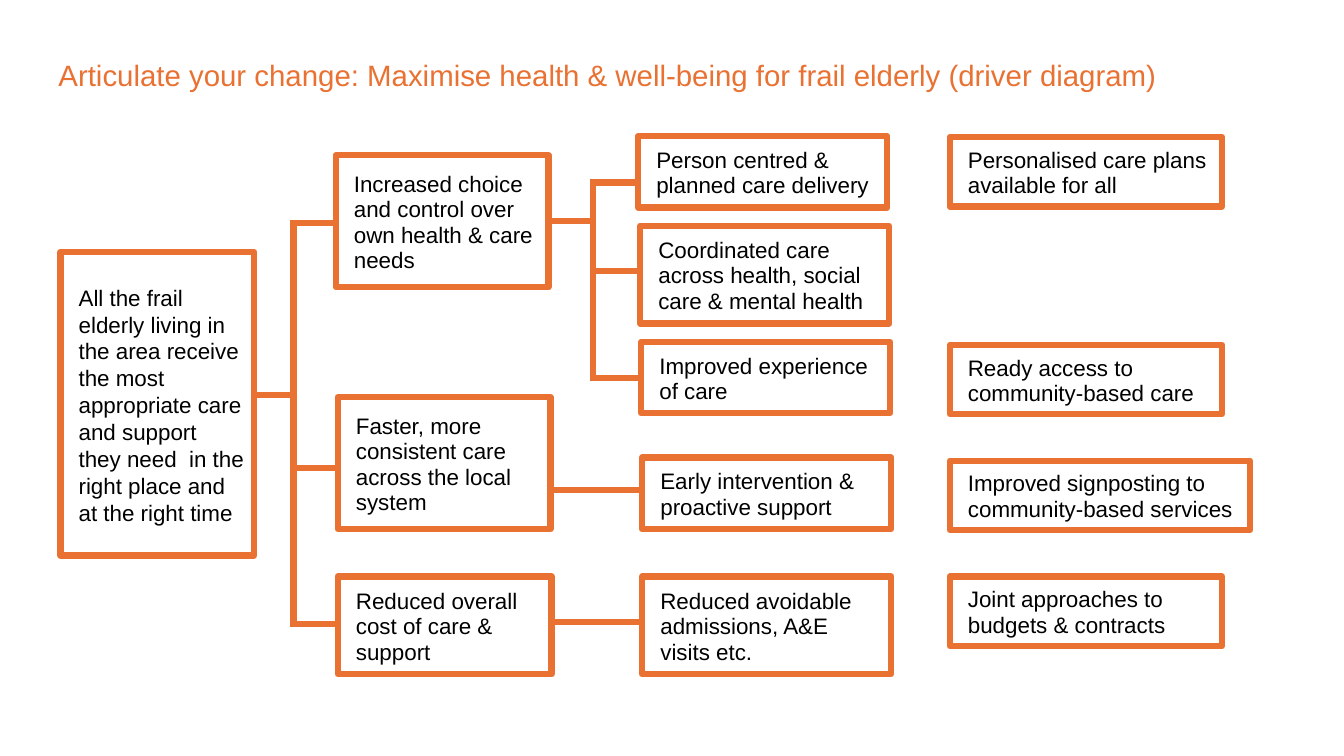
from dataclasses import dataclass

from lxml import etree
from pptx import Presentation
from pptx.dml.color import RGBColor
from pptx.enum.shapes import MSO_CONNECTOR, MSO_SHAPE
from pptx.enum.text import MSO_ANCHOR, PP_ALIGN
from pptx.oxml.ns import qn
from pptx.util import Emu, Pt

STRAIGHT = MSO_CONNECTOR.STRAIGHT
RECTANGLE = MSO_SHAPE.RECTANGLE
MIDDLE = MSO_ANCHOR.MIDDLE
LEFT = PP_ALIGN.LEFT
TITLE_ONLY = 5
EMU_PER_PX = 9144  # 100 px to the inch


@dataclass(frozen=True)
class Theme:
    accent: RGBColor = RGBColor(0xE9, 0x71, 0x32)
    paper: RGBColor = RGBColor(0xFF, 0xFF, 0xFF)
    ink: RGBColor = RGBColor(0x00, 0x00, 0x00)
    font: str = "Arial"
    title_size: Pt = Pt(21)
    body_size: Pt = Pt(16)
    tight_spacing: Pt = Pt(18.2)
    open_spacing: Pt = Pt(19.2)
    line_width: Pt = Pt(4.5)


@dataclass(frozen=True)
class Box:
    left: int
    top: int
    width: int
    height: int

    def inner(self, left, top, width, height):
        return Box(self.left + left, self.top + top, width, height)

    def emu(self):
        return [px(n) for n in (self.left, self.top, self.width, self.height)]


THEME = Theme()

TITLE = "Articulate your change: Maximise health & well-being for frail elderly (driver diagram)"

# Each entry: left, top, width, height inside its column, then its paragraphs
OUTCOME = [
    (0, 0, 192, 301, ["All the frail elderly living in the area receive the most appropriate "
                      "care and support they need  in the right place and at the right time"]),
]
PRIMARY_DRIVERS = [
    (0, 0, 211, 131, ["Increased choice and control over own health & care needs"]),
    (2, 240, 211, 131, ["Faster, more consistent care across the local system"]),
    (2, 418, 212, 97, ["Reduced overall cost of care & support"]),
]
SECONDARY_DRIVERS = [
    (0, 0, 247, 71, ["Person centred & planned care delivery"]),
    (2, 89, 247, 97, ["Coordinated care across health, social care & mental health"]),
    (3, 204, 247, 71, ["Improved experience of care"]),
    (4, 319, 247, 71, ["Early intervention & proactive support"]),
    (4, 437, 247, 97, ["Reduced avoidable admissions, A&E", "visits etc."]),
]
PROJECTS = [
    (0, 0, 270, 69, ["Personalised care plans available for all"]),
    (0, 206, 270, 69, ["Ready access to community-based care"]),
    (0, 321, 298, 69, ["Improved signposting to community-based services"]),
    (0, 436, 270, 69, ["Joint approaches to budgets & contracts"]),
]


def px(length):
    return Emu(length * EMU_PER_PX)


def set_insets(frame, left, top, right, bottom):
    frame.margin_left, frame.margin_top = px(left), px(top)
    frame.margin_right, frame.margin_bottom = px(right), px(bottom)
    frame.vertical_anchor = MIDDLE
    frame.word_wrap = True


def format_paragraph(paragraph, size, color):
    paragraph.alignment = LEFT
    paragraph.font.name = THEME.font
    paragraph.font.size = size
    paragraph.font.color.rgb = color


def add_title(slide, box):
    title = slide.shapes.title
    title.left, title.top, title.width, title.height = box.emu()
    title.text_frame.text = TITLE
    set_insets(title.text_frame, 10, 5, 10, 5)
    format_paragraph(title.text_frame.paragraphs[0], THEME.title_size, THEME.accent)


def add_column(slide, box, entries, spacing):
    for left, top, width, height, texts in entries:
        card = slide.shapes.add_shape(RECTANGLE, *box.inner(left, top, width, height).emu())
        card.shadow.inherit = False
        card.fill.solid()
        card.fill.fore_color.rgb = THEME.paper
        card.line.color.rgb = THEME.accent
        card.line.width = THEME.line_width
        frame = card.text_frame
        set_insets(frame, 18, 2, 10, 0)
        frame.text = "\n".join(texts)
        for paragraph in frame.paragraphs:
            format_paragraph(paragraph, THEME.body_size, THEME.ink)
            paragraph.line_spacing = spacing


def add_line(slide, box, start, end):
    points = [px(n) for x, y in (start, end) for n in (box.left + x, box.top + y)]
    connector = slide.shapes.add_connector(STRAIGHT, *points)
    connector.line.color.rgb = THEME.accent
    connector.line.width = THEME.line_width
    etree.SubElement(connector._element.spPr, qn("a:effectLst"))


def add_bracket(slide, box, stem_y, trunk_x, branches):
    """Stem from the left edge to a trunk, then a branch to each driver."""
    overlap = 3  # half a line width, to square off the corners
    heights = [y for _, y in branches]
    add_line(slide, box, (0, stem_y), (trunk_x, stem_y))
    add_line(slide, box, (trunk_x, min(heights) - overlap), (trunk_x, max(heights) + overlap))
    for x, y in branches:
        add_line(slide, box, (trunk_x, y), (x, y))


def add_driver_diagram(slide, box):
    # Columns of boxes, from outcome to projects
    add_column(slide, box.inner(0, 115, 192, 301), OUTCOME, THEME.open_spacing)
    add_column(slide, box.inner(273, 19, 214, 515), PRIMARY_DRIVERS, THEME.tight_spacing)
    add_column(slide, box.inner(573, 0, 251, 534), SECONDARY_DRIVERS, THEME.tight_spacing)
    add_column(slide, box.inner(882, 1, 298, 505), PROJECTS, THEME.tight_spacing)

    # Outcome to primary drivers
    add_bracket(slide, box.inner(193, 86, 83, 398), 171, 38, [(82, 0), (83, 243), (82, 398)])
    # Choice and control to its secondary drivers
    add_bracket(slide, box.inner(483, 46, 94, 194), 38, 45, [(88, 0), (93, 88), (94, 194)])
    # Single links
    for y in (351, 482):
        add_line(slide, box, (487, y), (576, y))


def main():
    presentation = Presentation()
    presentation.slide_width, presentation.slide_height = px(1333), px(750)
    slide = presentation.slides.add_slide(presentation.slide_layouts[TITLE_ONLY])
    add_title(slide, Box(48, 52, 1111, 45))
    add_driver_diagram(slide, Box(60, 135, 1180, 534))
    presentation.save("out.pptx")


if __name__ == "__main__":
    main()
